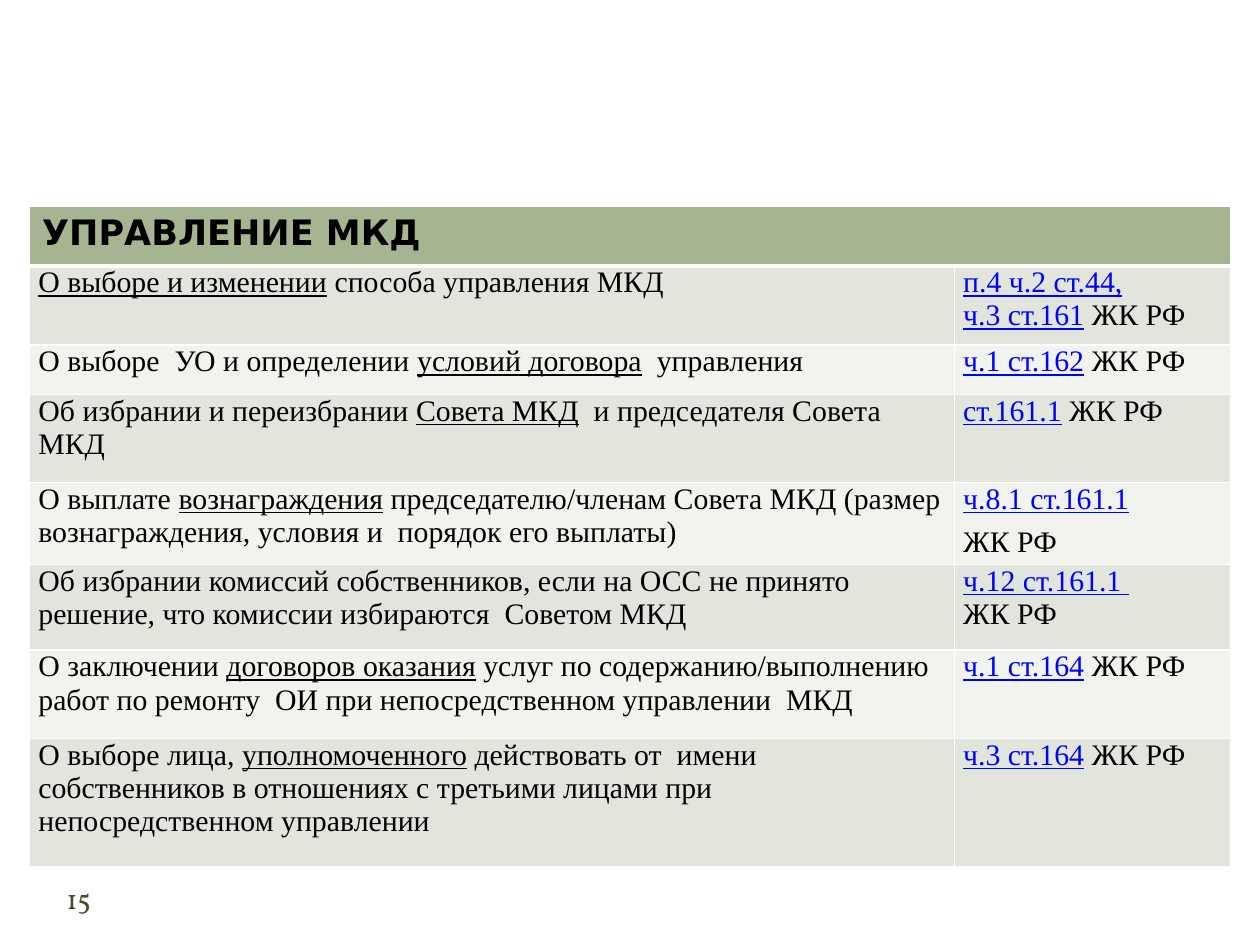
from lxml.etree import SubElement
from pptx import Presentation
from pptx.dml.color import RGBColor as RGB
from pptx.enum.text import MSO_ANCHOR as Anchor, PP_ALIGN as Align
from pptx.oxml.ns import qn
from pptx.util import Inches, Pt

COLORS = {"head": "A5B592", "dark": "E1E5DC", "light": "F0F3EE", "rule": "FFFFFF",
          "text": "000000", "link": "0000FF", "page": "444D26"}
COLS, ROWS = 100, 75  # grid of the slide

TITLE = "УПРАВЛЕНИЕ МКД"
HEAD = 4.7
# Row height, question, legal basis; underscores enclose underlined words
ITEMS = [
    (6.3, "_О выборе и изменении_ способа управления МКД",
     ["_п.4 ч.2 ст.44,_", "_ч.3 ст.161_ ЖК РФ"]),
    (3.9, "О выборе  УО и определении _условий договора_  управления",
     ["_ч.1 ст.162_ ЖК РФ"]),
    (7, "Об избрании и переизбрании _Совета МКД_  и председателя Совета МКД",
     ["_ст.161.1_ ЖК РФ"]),
    (6.3, "О выплате _вознаграждения_ председателю/членам Совета МКД "
     "(размер вознаграждения, условия и  порядок его выплаты)",
     ["_ч.8.1 ст.161.1_", "ЖК РФ"]),
    (6.8, "Об избрании комиссий собственников, если на ОСС не принято решение, "
     "что комиссии избираются  Советом МКД",
     ["_ч.12 ст.161.1 _", "ЖК РФ"]),
    (7, "О заключении _договоров оказания_ услуг по содержанию/выполнению "
     "работ по ремонту  ОИ при непосредственном управлении  МКД",
     ["_ч.1 ст.164_ ЖК РФ"]),
    (10.2, "О выборе лица, _уполномоченного_ действовать от  имени собственников "
     "в отношениях с третьими лицами при непосредственном управлении",
     ["_ч.3 ст.164_ ЖК РФ"]),
]
TIGHT = {0, 4}  # items whose legal basis has no gap between its lines


class Deck:
    font, size = "Times New Roman", 17

    def __init__(self):
        self.prs = Presentation()
        self.prs.slide_width, self.prs.slide_height = Inches(10), Inches(7.5)
        self.slide = self.prs.slides.add_slide(self.prs.slide_layouts[6])

    def x(self, cols):
        return round(self.prs.slide_width * cols / COLS)

    def y(self, rows):
        return round(self.prs.slide_height * rows / ROWS)

    def box(self, left, top, width, height):
        return self.x(left), self.y(top), self.x(width), self.y(height)

    def style(self, run, color="text", font=None, size=None, bold=False):
        face = run.font
        face.name, face.size = font or self.font, Pt(size or self.size)
        face.bold = bold
        face.color.rgb = RGB.from_string(COLORS[color])

    def label(self, text, place, **look):
        frame = self.slide.shapes.add_textbox(*self.box(*place)).text_frame
        frame.margin_left = frame.margin_right = 0
        frame.margin_top = frame.margin_bottom = 0
        frame.word_wrap, frame.vertical_anchor = True, Anchor.MIDDLE
        frame.text = text
        para = frame.paragraphs[0]
        para.alignment = Align.CENTER
        self.style(para.runs[0], **look)

    def table(self, left, top, widths, heights):
        place = self.box(left, top, sum(widths), sum(heights))
        grid = self.slide.shapes.add_table(len(heights), len(widths), *place).table
        for col, width in zip(grid.columns, widths):
            col.width = self.x(width)
        for row, height in zip(grid.rows, heights):
            row.height = self.y(height)
        return grid

    def paint(self, cell, fill, base=1):
        """Fill a cell and draw its white borders, the lower one base points wide."""
        props = cell._tc.get_or_add_tcPr()
        for side in "LRTB":
            width = Pt(base if side == "B" else 1)
            line = SubElement(props, qn(f"a:ln{side}"), w=str(width))
            solid = SubElement(line, qn("a:solidFill"))
            SubElement(solid, qn("a:srgbClr"), val=COLORS["rule"])
        cell.fill.solid()
        cell.fill.fore_color.rgb = RGB.from_string(COLORS[fill])

    def entry(self, cell, lines, accent="text", tight=False):
        cell.margin_left = cell.margin_right = self.x(0.7)
        cell.margin_top = cell.margin_bottom = 0
        frame = cell.text_frame
        frame.text = "\n".join([""] * len(lines))
        for para, line in zip(frame.paragraphs, lines):
            para.space_after = Pt(0 if tight and line != lines[-1] else 6)
            for at, part in enumerate(line.split("_")):
                if part:
                    run = para.add_run()
                    run.text = part
                    marked = at % 2 == 1
                    self.style(run, accent if marked else "text")
                    run.font.underline = marked


def main():
    deck = Deck()
    deck.label("15", (3.5, 69.3, 5.5, 4), color="page", font="Vollkorn", size=16)

    heights = [HEAD] + [item[0] for item in ITEMS]
    grid = deck.table(2.35, 16.4, (73.4, 21.9), heights)
    head = grid.cell(0, 0)
    head.merge(grid.cell(0, 1))
    head.text_frame.text = TITLE
    deck.style(head.text_frame.paragraphs[0].runs[0],
               font="DejaVu Sans", size=20, bold=True)
    for col in range(2):
        deck.paint(grid.cell(0, col), "head", base=3)

    for at, (_, topic, law) in enumerate(ITEMS):
        left, right = grid.cell(at + 1, 0), grid.cell(at + 1, 1)
        deck.entry(left, [topic])
        deck.entry(right, law, accent="link", tight=at in TIGHT)
        for cell in (left, right):
            deck.paint(cell, "light" if at % 2 else "dark")

    deck.prs.save("out.pptx")


if __name__ == "__main__":
    main()
